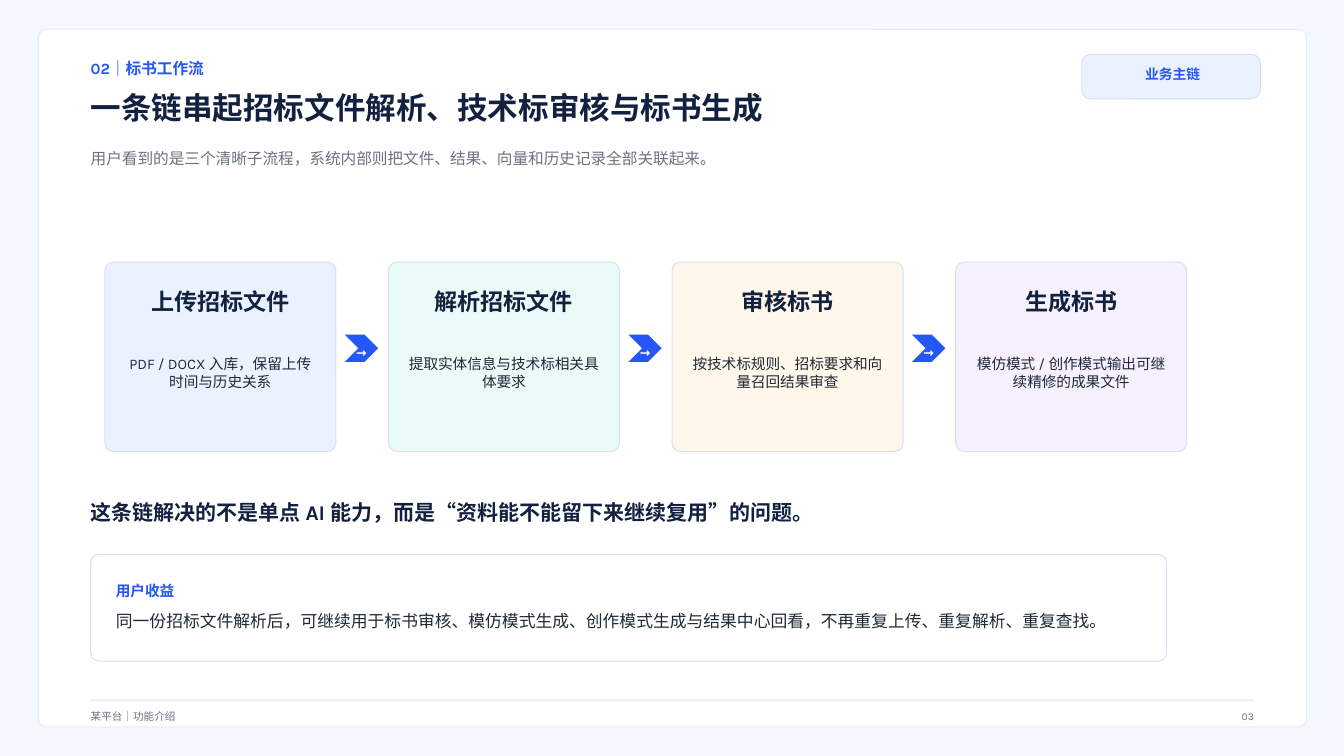
from pptx import Presentation
from pptx.dml.color import RGBColor
from pptx.enum.shapes import MSO_SHAPE
from pptx.enum.text import PP_ALIGN
from pptx.util import Inches, Pt

RECT, ROUND, CHEVRON = MSO_SHAPE.RECTANGLE, MSO_SHAPE.ROUNDED_RECTANGLE, MSO_SHAPE.CHEVRON
LEFT, CENTER, RIGHT = PP_ALIGN.LEFT, PP_ALIGN.CENTER, PP_ALIGN.RIGHT

WIDE, HIGH = 13.33, 7.5
FONT = "Karla"
BLUE, NAVY, INK, GRAY = "2457F5", "12213F", "1F2937", "6B7280"
PALE, EDGE, WHITE = "EAF2FF", "D8E1F0", "FFFFFF"

STYLES = {
    "kicker": {"size": 11.2, "color": BLUE, "bold": True},
    "title": {"size": 21.8, "color": NAVY, "bold": True},
    "lead": {"size": 11.2, "color": GRAY, "bold": False},
    "tag": {"size": 9.8, "color": BLUE, "bold": True},
    "step": {"size": 16.5, "color": NAVY, "bold": True},
    "detail": {"size": 10.5, "color": INK, "bold": False},
    "arrow": {"size": 9, "color": WHITE, "bold": True},
    "claim": {"size": 15, "color": NAVY, "bold": True},
    "label": {"size": 10.5, "color": BLUE, "bold": True},
    "body": {"size": 12, "color": INK, "bold": False},
    "foot": {"size": 7.5, "color": GRAY, "bold": False},
}

STEPS = [
    ("上传招标文件", "PDF / DOCX 入库，保留上传时间与历史关系", PALE),
    ("解析招标文件", "提取实体信息与技术标相关具体要求", "EAFBF7"),
    ("审核标书", "按技术标规则、招标要求和向量召回结果审查", "FFF7EA"),
    ("生成标书", "模仿模式 / 创作模式输出可继续精修的成果文件", "F6F0FF"),
]

MARGIN, INSET = 0.9, 0.25
END = 12.44
HEAD = [
    ("02｜标书工作流", "kicker", 0.58, 2.5, 0.25),
    ("一条链串起招标文件解析、技术标审核与标书生成", "title", 0.88, 8.96, 0.67),
    ("用户看到的是三个清晰子流程，系统内部则把文件、结果、向量和历史记录全部关联起来。",
     "lead", 1.48, 9.38, 0.46),
    ("这条链解决的不是单点 AI 能力，而是“资料能不能留下来继续复用”的问题。",
     "claim", 4.96, 10.62, 0.33),
]
GAIN = [
    ("用户收益", "label", 5.77, 0.94, 0.21),
    ("同一份招标文件解析后，可继续用于标书审核、模仿模式生成、创作模式生成与结果中心回看，"
     "不再重复上传、重复解析、重复查找。", "body", 6.06, 10.1, 0.35),
]

CARD_X, CARD_Y, CARD_W, CARD_H = 1.04, 2.6, 2.29, 1.88
PITCH = 2.813
TEXT_W = 1.92
ARROW_W, ARROW_H, MARK_W = 0.33, 0.27, 0.21

deck = Presentation()
deck.slide_width, deck.slide_height = Inches(WIDE), Inches(HIGH)
slide = deck.slides.add_slide(deck.slide_layouts[6])


def rgb(code):
    return RGBColor.from_string(code)


def shape(kind, x, y, w, h, fill, edge=None, curve=None):
    item = slide.shapes.add_shape(kind, Inches(x), Inches(y), Inches(w), Inches(h))
    item.shadow.inherit = False
    item.fill.solid()
    item.fill.fore_color.rgb = rgb(fill)
    if edge:
        item.line.color.rgb = rgb(edge)
        item.line.width = Pt(0.75)
    else:
        item.line.fill.background()
    if curve is not None:
        item.adjustments[0] = curve


def text(words, style, x, y, w, h, align=LEFT):
    box = slide.shapes.add_textbox(Inches(x), Inches(y), Inches(w), Inches(h))
    frame = box.text_frame
    frame.word_wrap = True
    for side in ("left", "top", "right", "bottom"):
        setattr(frame, f"margin_{side}", 0)
    line = frame.paragraphs[0]
    line.alignment = align
    run = line.add_run()
    run.text = words
    look = STYLES[style]
    for name, value in {"name": FONT, "size": Pt(look["size"]), "bold": look["bold"]}.items():
        setattr(run.font, name, value)
    run.font.color.rgb = rgb(look["color"])


shape(RECT, 0, 0, WIDE, HIGH, "F5F8FE")
shape(ROUND, 0.38, 0.29, 12.58, 6.92, WHITE, "E5ECF7", 0.012)

for words, style, y, w, h in HEAD:
    text(words, style, MARGIN, y, w, h)

shape(ROUND, 10.73, 0.54, 1.77, 0.44, PALE, EDGE, 0.19)
text("业务主链", "tag", 10.9, 0.65, 1.46, 0.21, CENTER)

for i, (name, detail, fill) in enumerate(STEPS):
    x = CARD_X + i * PITCH
    shape(ROUND, x, CARD_Y, CARD_W, CARD_H, fill, EDGE, 0.044)
    inner = x + (CARD_W - TEXT_W) / 2
    text(name, "step", inner, CARD_Y + 0.25, TEXT_W, 0.54, CENTER)
    text(detail, "detail", inner, CARD_Y + 0.92, TEXT_W, 0.67, CENTER)
    if i < len(STEPS) - 1:
        tip = x + CARD_W + 0.09
        shape(CHEVRON, tip, CARD_Y + 0.72, ARROW_W, ARROW_H, BLUE)
        text("→", "arrow", tip + (ARROW_W - MARK_W) / 2, CARD_Y + 0.82, MARK_W, 0.08, CENTER)

shape(ROUND, MARGIN, 5.5, 10.67, 1.06, WHITE, EDGE, 0.078)
for words, style, y, w, h in GAIN:
    text(words, style, MARGIN + INSET, y, w, h)

shape(RECT, MARGIN, 6.94, END - MARGIN, 0.01, EDGE)
text("某平台｜功能介绍", "foot", MARGIN, 7.04, 3.12, 0.17)
text("03", "foot", END - 2.23, 7.04, 2.23, 0.17, RIGHT)

deck.save("out.pptx")
